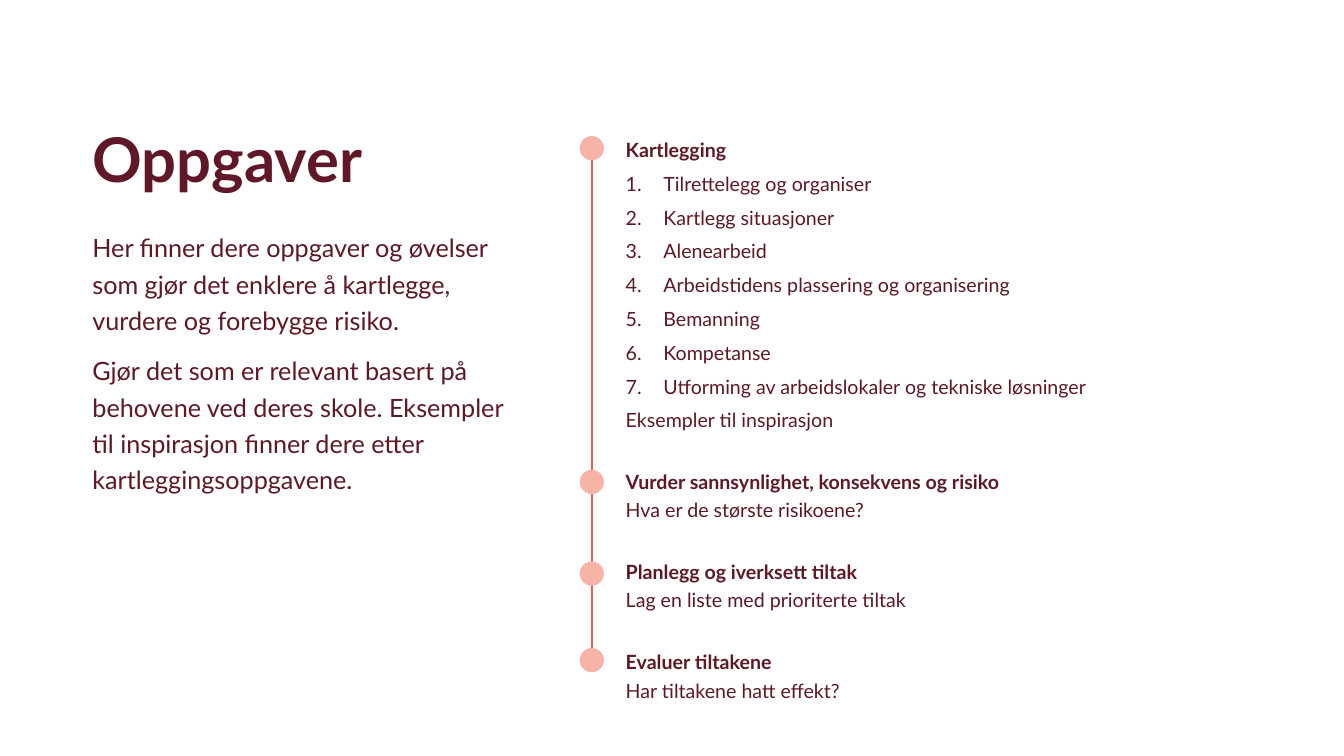
"""Build the "Oppgaver" slide: an introduction beside a timeline of tasks."""
from dataclasses import dataclass

from lxml.etree import SubElement
from pptx import Presentation
from pptx.dml.color import RGBColor
from pptx.enum.shapes import MSO_CONNECTOR, MSO_SHAPE
from pptx.enum.text import MSO_ANCHOR, MSO_AUTO_SIZE, PP_ALIGN
from pptx.oxml.ns import qn
from pptx.util import Cm, Pt

FONT = "Lato"
WINE, CORAL, PINK = "601828", "EF5F50", "F7B3A6"
DOT_LEFT, DOT_SIZE = 14.61, 0.61
DOT_TOPS = (3.43, 11.84, 14.15, 16.33)
INDENT = 0.95
STEP_GAP = 24


@dataclass(frozen=True)
class Box:
    left: float
    top: float
    width: float
    height: float

    def lengths(self) -> tuple:
        return Cm(self.left), Cm(self.top), Cm(self.width), Cm(self.height)


@dataclass(frozen=True)
class Para:
    text: str = ""
    heading: str = ""
    numbered: bool = False
    before: float = 4


TITLE_BOX = Box(2.33, 1.37, 29.21, 3.68)
INTRO_BOX = Box(2.33, 5.59, 10.74, 7.01)
STEPS_BOX = Box(15.52, 3.23, 17.91, 14.71)

INTRO = (
    Para("Her finner dere oppgaver og øvelser som gjør det enklere å kartlegge, "
         "vurdere og forebygge risiko.", before=10),
    Para("Gjør det som er relevant basert på behovene ved deres skole. Eksempler "
         "til inspirasjon finner dere etter kartleggingsoppgavene.", before=10),
)
TASKS = (
    "Tilrettelegg og organiser",
    "Kartlegg situasjoner",
    "Alenearbeid",
    "Arbeidstidens plassering og organisering",
    "Bemanning",
    "Kompetanse",
    "Utforming av arbeidslokaler og tekniske løsninger",
)
STEPS = (
    Para(heading="Kartlegging"),
    *(Para(task, numbered=True) for task in TASKS),
    Para("Eksempler til inspirasjon"),
    Para("Hva er de største risikoene?",
         "Vurder sannsynlighet, konsekvens og risiko", before=STEP_GAP),
    Para("Lag en liste med prioriterte tiltak",
         "Planlegg og iverksett tiltak", before=STEP_GAP),
    Para("Har tiltakene hatt effekt?", "Evaluer tiltakene", before=STEP_GAP),
)


def rgb(colour: str) -> RGBColor:
    return RGBColor.from_string(colour)


def add_run(p, text: str, size: float, bold: bool = False) -> None:
    r = p.add_run()
    r.text = text
    r.font.name = FONT
    r.font.size = Pt(size)
    r.font.bold = bold
    r.font.color.rgb = rgb(WINE)


def number(p) -> None:
    pPr = p._p.get_or_add_pPr()
    pPr.set("marL", str(Cm(INDENT)))
    pPr.set("indent", str(-Cm(INDENT)))
    SubElement(pPr, qn("a:buFont"), typeface="+mj-lt")
    SubElement(pPr, qn("a:buAutoNum"), type="arabicPeriod")


def place_title(sp, text: str) -> None:
    sp.left, sp.top, sp.width, sp.height = TITLE_BOX.lengths()
    tf = sp.text_frame
    tf.auto_size = MSO_AUTO_SIZE.NONE
    tf.vertical_anchor = MSO_ANCHOR.BOTTOM
    tf.margin_left = 0
    p = tf.paragraphs[0]
    p.alignment = PP_ALIGN.LEFT
    p.line_spacing = 0.9
    add_run(p, text, 44, bold=True)


def add_text(slide, box: Box, paras: tuple[Para, ...], size: float,
             margin_left: float = 0.25) -> None:
    tf = slide.shapes.add_textbox(*box.lengths()).text_frame
    tf.word_wrap = True
    tf.margin_left = Cm(margin_left)
    for i, para in enumerate(paras):
        p = tf.add_paragraph() if i else tf.paragraphs[0]
        p.line_spacing = 1.2
        p.space_before = Pt(para.before)
        if para.numbered:
            number(p)
        if para.heading:
            add_run(p, para.heading, size, bold=True)
        if para.heading and para.text:
            p.add_line_break()
        if para.text:
            add_run(p, para.text, size)


def add_dot(slide, top: float) -> None:
    box = Box(DOT_LEFT, top, DOT_SIZE, DOT_SIZE)
    sp = slide.shapes.add_shape(MSO_SHAPE.OVAL, *box.lengths())
    sp.shadow.inherit = False
    sp.fill.solid()
    sp.fill.fore_color.rgb = rgb(PINK)
    sp.line.fill.background()


def add_timeline(slide) -> None:
    x = Cm(DOT_LEFT + DOT_SIZE / 2)
    line = slide.shapes.add_connector(
        MSO_CONNECTOR.STRAIGHT, x, Cm(DOT_TOPS[0] + DOT_SIZE), x, Cm(DOT_TOPS[-1]))
    line.line.color.rgb = rgb(CORAL)
    line.line.width = Pt(1)
    SubElement(line._element.spPr, qn("a:effectLst"))
    for top in DOT_TOPS:
        add_dot(slide, top)


def main() -> None:
    prs = Presentation()
    prs.slide_width, prs.slide_height = Cm(33.87), Cm(19.05)
    slide = prs.slides.add_slide(prs.slide_layouts.get_by_name("Title Only"))
    place_title(slide.shapes.title, "Oppgaver")
    add_text(slide, INTRO_BOX, INTRO, 18, margin_left=0)
    add_text(slide, STEPS_BOX, STEPS, 14)
    add_timeline(slide)
    prs.save("out.pptx")


if __name__ == "__main__":
    main()
